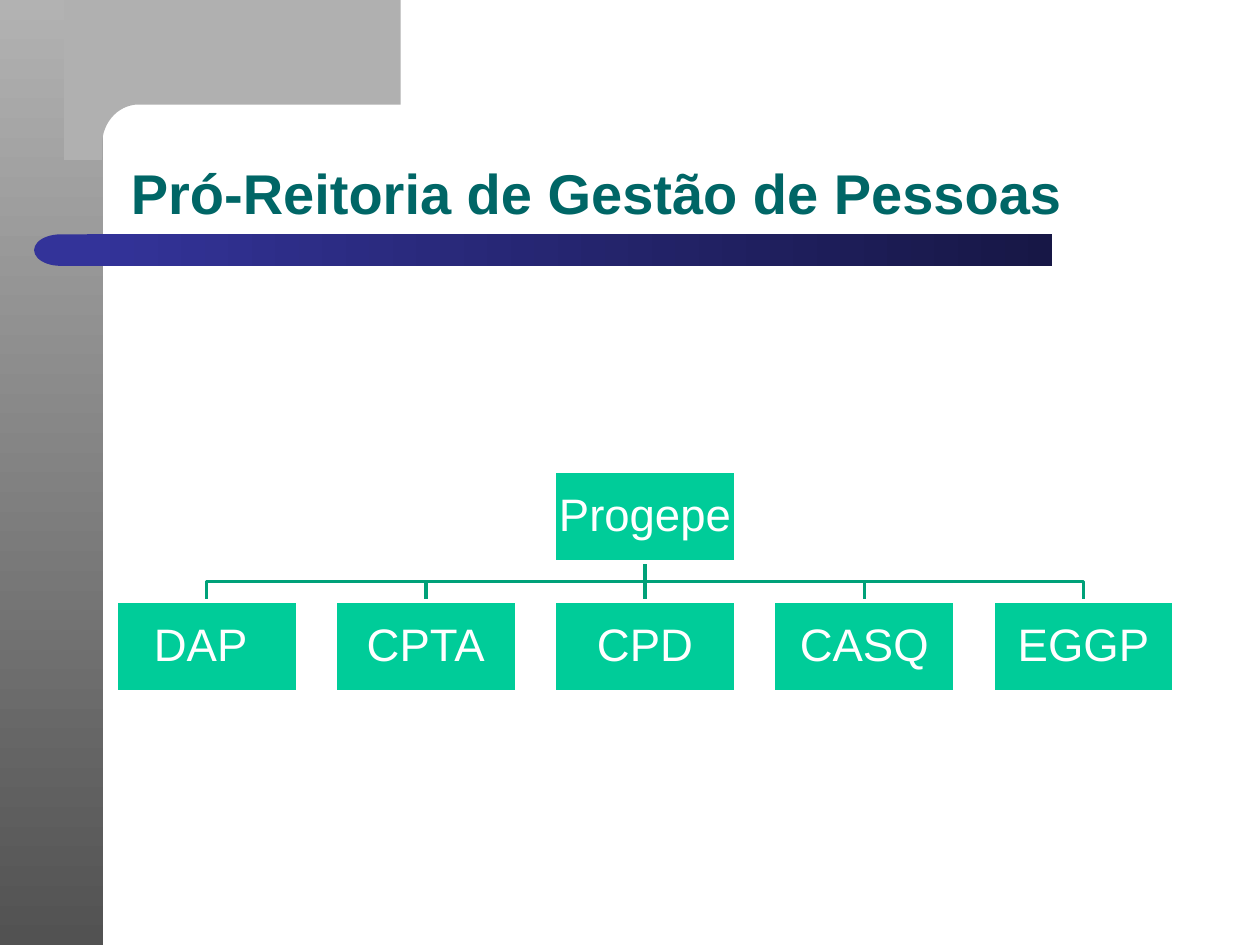
import math
from dataclasses import dataclass

import lxml.etree
import pptx
import pptx.dml.color
import pptx.enum.shapes
import pptx.enum.text
import pptx.oxml.ns
import pptx.util

Inches = pptx.util.Inches
Preset = pptx.enum.shapes.MSO_SHAPE
Align = pptx.enum.text.PP_ALIGN
Anchor = pptx.enum.text.MSO_ANCHOR


@dataclass(frozen=True)
class Theme:
    font: str = "Arial"
    title_size: int = 32
    box_size: int = 26
    line_width: int = 2
    title: str = "006666"
    white: str = "FFFFFF"
    corner: str = "B0B0B0"
    side_top: str = "B2B2B2"
    side_bottom: str = "525252"
    bar_start: str = "333399"
    bar_end: str = "171746"
    box: str = "00CC99"
    branch: str = "00A179"


def rgb(color):
    return pptx.dml.color.RGBColor.from_string(color)


class SlideBuilder:
    """Draws styled elements on the current slide."""

    def __init__(self, slide, theme):
        self.slide = slide
        self.theme = theme

    def shape(self, preset, left, top, width, height, color, end_color=None, angle=0):
        shape = self.slide.shapes.add_shape(
            preset, Inches(left), Inches(top), Inches(width), Inches(height))
        shape.shadow.inherit = False
        shape.line.fill.background()
        if end_color:
            shape.fill.gradient()
            shape.fill.gradient_angle = angle
            for stop, stop_color in zip(shape.fill.gradient_stops, (color, end_color)):
                stop.color.rgb = rgb(stop_color)
        else:
            shape.fill.solid()
            shape.fill.fore_color.rgb = rgb(color)
        return shape

    def outline(self, points, closed):
        points = [(Inches(x), Inches(y)) for x, y in points]
        builder = self.slide.shapes.build_freeform(*points[0])
        builder.add_line_segments(points[1:], close=closed)
        shape = builder.convert_to_shape()
        shape.shadow.inherit = False
        return shape

    def area(self, points, color):
        shape = self.outline(points, True)
        shape.fill.solid()
        shape.fill.fore_color.rgb = rgb(color)
        shape.line.fill.background()

    def stroke(self, line, color):
        line.color.rgb = rgb(color)
        line.width = pptx.util.Pt(self.theme.line_width)

    def branch(self, start_x, start_y, end_x, end_y):
        if start_x == end_x:
            shape = self.slide.shapes.add_connector(
                pptx.enum.shapes.MSO_CONNECTOR.STRAIGHT,
                Inches(start_x), Inches(start_y), Inches(end_x), Inches(end_y))
            lxml.etree.SubElement(
                shape._element.spPr, pptx.oxml.ns.qn("a:effectLst"))
        else:
            middle = (start_y + end_y) / 2
            shape = self.outline([(start_x, start_y), (start_x, middle),
                                  (end_x, middle), (end_x, end_y)], False)
            shape.fill.background()
        self.stroke(shape.line, self.theme.branch)

    def text(self, shape, text, size, color, align, anchor, margins, bold=False):
        frame = shape.text_frame
        frame.word_wrap = True
        frame.vertical_anchor = anchor
        frame.margin_left = frame.margin_right = Inches(margins[0])
        frame.margin_top = frame.margin_bottom = Inches(margins[1])
        paragraph = frame.paragraphs[0]
        paragraph.alignment = align
        paragraph.line_spacing = 0.9
        run = paragraph.add_run()
        run.text = text
        run.font.name = self.theme.font
        run.font.size = pptx.util.Pt(size)
        run.font.bold = bold
        run.font.color.rgb = rgb(color)

    def title(self, text, left, top, width, height):
        shape = self.slide.shapes.add_textbox(
            Inches(left), Inches(top), Inches(width), Inches(height))
        self.text(shape, text, self.theme.title_size, self.theme.title,
                  Align.LEFT, Anchor.BOTTOM, (0.1, 0.05), True)

    def box(self, text, left, top, width, height):
        shape = self.shape(Preset.RECTANGLE, left, top, width, height, self.theme.box)
        self.stroke(shape.line, self.theme.white)
        self.text(shape, text, self.theme.box_size, self.theme.white,
                  Align.CENTER, Anchor.MIDDLE, (0.02, 0.02))


def draw_frame(builder):
    theme = builder.theme
    builder.shape(Preset.RECTANGLE, -0.01, 0, 0.83, 7.5,
                  theme.side_top, theme.side_bottom, 270)
    angles = [math.radians(degrees) for degrees in range(90, 181, 6)]
    curve = [(1.1 + 0.29 * math.cos(angle), 1.15 - 0.32 * math.sin(angle))
             for angle in angles]
    builder.area([(3.18, 0), (3.18, 0.83), *curve,
                  (0.81, 1.27), (0.51, 1.27), (0.51, 0)], theme.corner)
    builder.shape(Preset.RECTANGLE, 0.69, 1.86, 7.66, 0.25,
                  theme.bar_start, theme.bar_end)
    cap = builder.shape(Preset.FLOWCHART_DELAY, 0.27, 1.86, 0.42, 0.25, theme.bar_start)
    cap.rotation = 180


def draw_chart(builder, root, units):
    width, height, pitch, left = 1.44, 0.72, 1.74, 0.92
    root_top, unit_top = 3.74, 4.77
    lefts = [left + pitch * index for index in range(len(units))]
    root_left = lefts[len(units) // 2]
    for unit_left in lefts:
        builder.branch(root_left + width / 2, root_top + height,
                       unit_left + width / 2, unit_top)
    builder.box(root, root_left, root_top, width, height)
    for unit, unit_left in zip(units, lefts):
        builder.box(unit, unit_left, unit_top, width, height)


def main():
    presentation = pptx.Presentation()
    presentation.slide_width = Inches(10)
    presentation.slide_height = Inches(7.5)
    slide = presentation.slides.add_slide(presentation.slide_layouts[6])
    builder = SlideBuilder(slide, Theme())
    draw_frame(builder)
    builder.title("Pró-Reitoria de Gestão de Pessoas", 0.94, 0.99, 8.5, 0.86)
    draw_chart(builder, "Progepe", ["DAP ", "CPTA", "CPD", "CASQ", "EGGP"])
    presentation.save("out.pptx")


if __name__ == "__main__":
    main()
